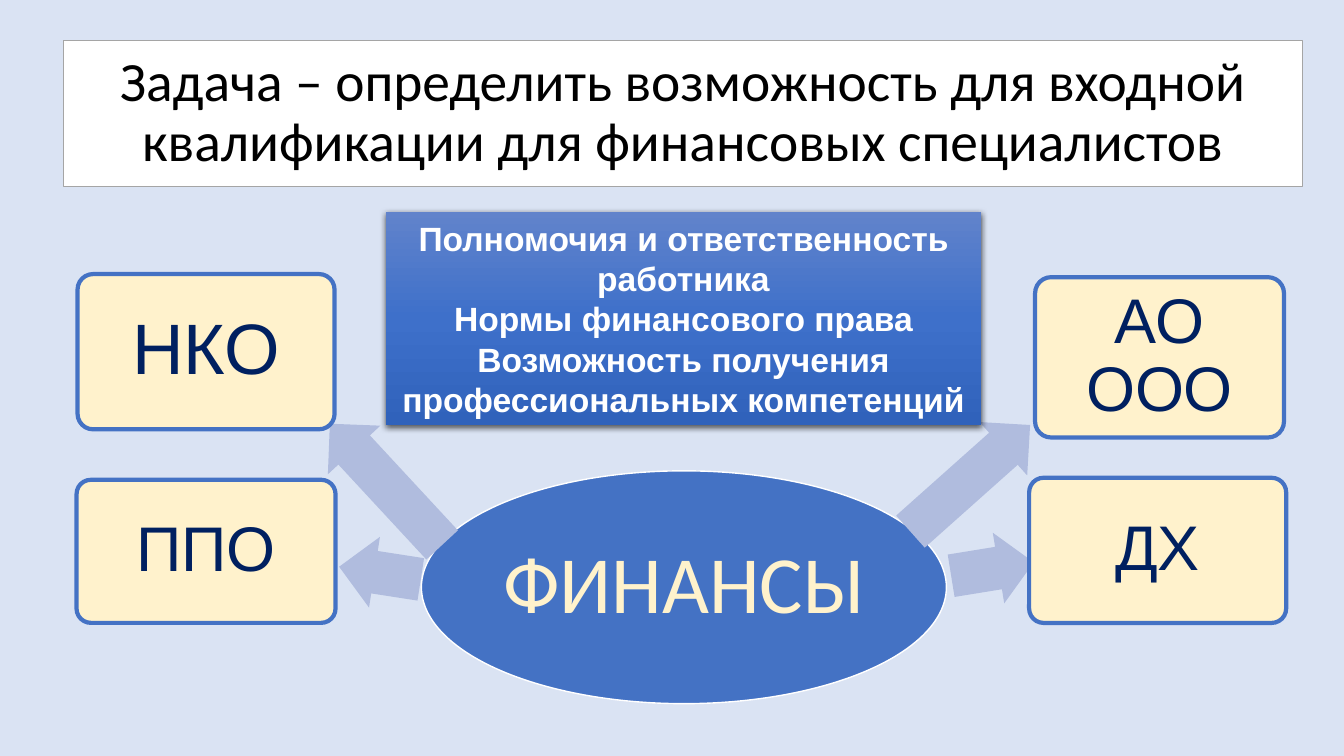
from copy import deepcopy
from lxml.etree import SubElement
from pptx import Presentation
from pptx.dml.color import RGBColor
from pptx.enum.shapes import MSO_SHAPE as Kind
from pptx.enum.text import MSO_ANCHOR as Anchor, PP_ALIGN as Align
from pptx.oxml.ns import qn
from pptx.util import Pt


def paint(target, color):
    target.solid()
    target.fore_color.rgb = RGBColor.from_string(color)


def write(shape, lines, size, color, font="Arial", bold=False, spacing=0.9, margin=6.5, wrap=True):
    frame = shape.text_frame
    frame.text = "\n".join(lines)
    inset = Pt(margin)
    frame_format = {
        "word_wrap": wrap,
        "vertical_anchor": Anchor.MIDDLE,
        "margin_left": inset,
        "margin_right": inset,
        "margin_top": inset,
        "margin_bottom": inset,
    }
    for name, value in frame_format.items():
        setattr(frame, name, value)
    for para in frame.paragraphs:
        para.alignment = Align.CENTER
        para.line_spacing = spacing
        for name, value in {"name": font, "size": Pt(size), "bold": bold}.items():
            setattr(para.font, name, value)
        for span in para.runs:
            paint(span.font.fill, color)


BLUE, CREAM, NAVY, WHITE = "4472C4", "FFF2CC", "002060", "FFFFFF"

deck = Presentation()
deck.slide_width, deck.slide_height = Pt(960), Pt(540)
page = deck.slides.add_slide(deck.slide_layouts[5])
paint(page.background.fill, "DAE3F3")

title = page.shapes.title
title_place = {"left": 45.2, "top": 28.8, "width": 885, "height": 104.4}
for name, value in title_place.items():
    setattr(title, name, Pt(value))
paint(title.fill, WHITE)
paint(title.line.fill, "A5A5A5")
title.line.width = Pt(1)
write(
    title,
    ["Задача – определить возможность для входной квалификации для финансовых специалистов"],
    39.6, "000000", font="Calibri",
)

finance = page.shapes.add_shape(Kind.OVAL, Pt(301), Pt(336.3), Pt(375), Pt(166.3))
finance.shadow.inherit = False
paint(finance.fill, BLUE)
paint(finance.line.fill, WHITE)
finance.line.width = Pt(1)
write(finance, ["ФИНАНСЫ"], 58, CREAM, font="Calibri", margin=3, wrap=False)

arrows = [
    (241.9, 383.8, 59, 8.8),
    (216.7, 320.4, 118, 47.2),
    (635.8, 316.1, 114.5, 138.3),
    (679, 380.9, 59.8, 170.8),
]
for left, top, width, angle in arrows:
    arrow = page.shapes.add_shape(Kind.LEFT_ARROW, Pt(left), Pt(top), Pt(width), Pt(51.1))
    arrow.rotation = angle
    arrow.adjustments[0] = 0.6
    arrow.shadow.inherit = False
    paint(arrow.fill, "B0BCDE")
    arrow.line.fill.background()

organisations = [
    ("ППО", 54.7, 342.7, 185, 102.2, 45),
    ("НКО", 55.4, 195.8, 183.6, 110.9, 51),
    ("АО ООО", 739.4, 198, 177.8, 114.5, 45),
    ("ДХ", 735.1, 341.3, 183.6, 103.7, 45),
]
for label, left, top, width, height, size in organisations:
    box = page.shapes.add_shape(Kind.ROUNDED_RECTANGLE, Pt(left), Pt(top), Pt(width), Pt(height))
    box.adjustments[0] = 0.1
    box.shadow.inherit = False
    paint(box.fill, CREAM)
    paint(box.line.fill, BLUE)
    box.line.width = Pt(3)
    write(box, [label], size, NAVY)

criteria = page.shapes.add_shape(Kind.RECTANGLE, Pt(275.8), Pt(151.2), Pt(424.8), Pt(152.6))
criteria.line.fill.background()
criteria.fill.gradient()
criteria.fill.gradient_angle = 270
stop_list = criteria._element.spPr.find(qn("a:gradFill")).find(qn("a:gsLst"))
stop_list.insert(1, deepcopy(stop_list[0]))
shades = [(0, "6183CB"), (0.5, "3E70CA"), (1, "3062BB")]
for stop, (position, shade) in zip(criteria.fill.gradient_stops, shades):
    stop.position = position
    stop.color.rgb = RGBColor.from_string(shade)
criteria.shadow.inherit = False
effects = criteria._element.spPr.find(qn("a:effectLst"))
shadow = SubElement(
    effects, qn("a:outerShdw"),
    blurRad=str(Pt(4.5)), dist=str(Pt(1.5)), dir="5400000", algn="ctr", rotWithShape="0",
)
shadow_color = SubElement(shadow, qn("a:srgbClr"), val="000000")
SubElement(shadow_color, qn("a:alpha"), val="63000")
write(
    criteria,
    [
        "Полномочия и ответственность работника",
        "Нормы финансового права",
        "Возможность получения профессиональных компетенций",
    ],
    24, WHITE, bold=True, spacing=1.0, margin=3.6,
)

deck.save("out.pptx")
